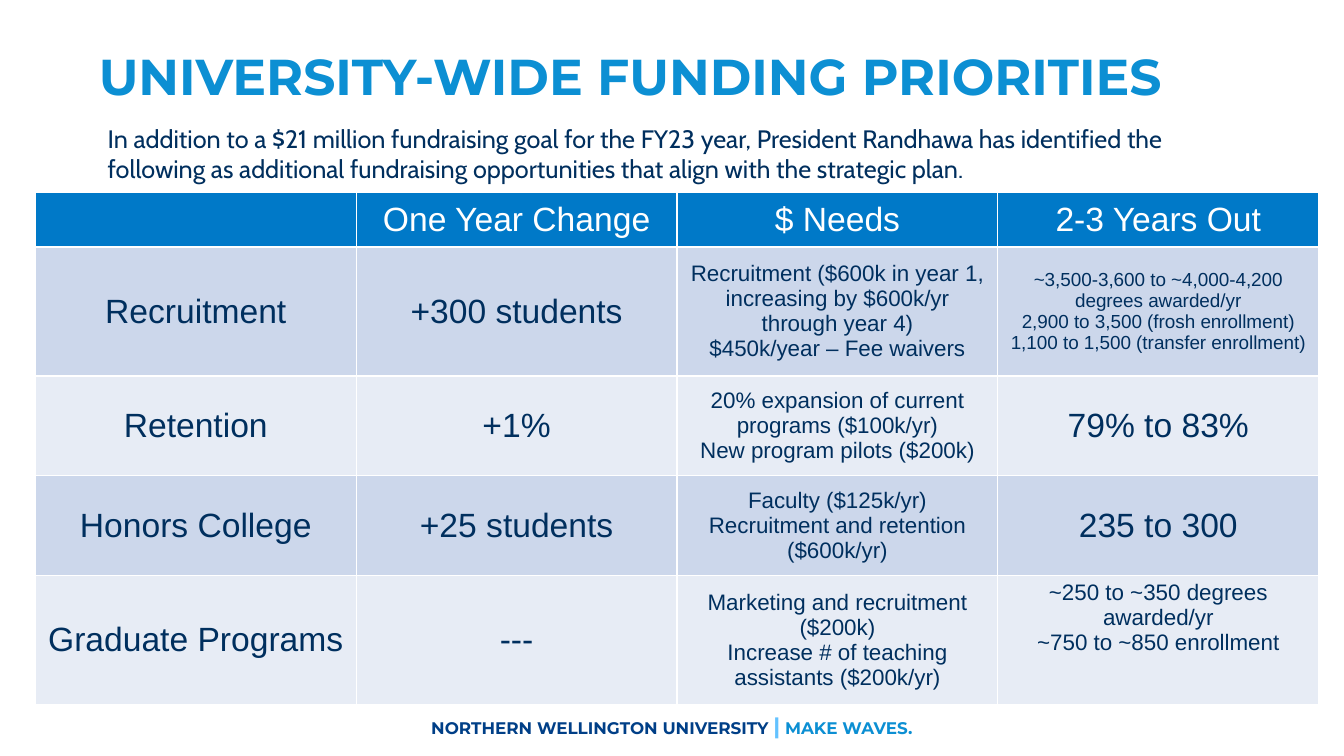
from pptx import Presentation
from pptx.dml.color import RGBColor
from pptx.enum.text import MSO_ANCHOR, MSO_AUTO_SIZE, PP_ALIGN
from pptx.util import Inches, Pt

LEFT, CENTER = PP_ALIGN.LEFT, PP_ALIGN.CENTER
TOP, MIDDLE = MSO_ANCHOR.TOP, MSO_ANCHOR.MIDDLE
NO_AUTOFIT = MSO_AUTO_SIZE.NONE

WHITE = RGBColor(0xFF, 0xFF, 0xFF)
NAVY = RGBColor(0x00, 0x2F, 0x5E)
ROYAL = RGBColor(0x00, 0x3F, 0x87)
BRIGHT = RGBColor(0x0C, 0x8F, 0xD3)
SKY = RGBColor(0x63, 0xC2, 0xFF)
HEADER_BLUE = RGBColor(0x00, 0x79, 0xC8)
BANDS = RGBColor(0xCC, 0xD7, 0xEB), RGBColor(0xE7, 0xEC, 0xF5)

GRID_COLUMNS, GRID_ROWS = 80, 45
LARGE, MEDIUM, SMALL = 24, 16, 13.5

HEADINGS = ["", "One Year Change", "$ Needs", "2-3 Years Out"]
PRIORITIES = [
    ("Recruitment", "+300 students",
     "Recruitment ($600k in year 1, increasing by $600k/yr through year 4)\n"
     "$450k/year – Fee waivers",
     "~3,500-3,600 to ~4,000-4,200 degrees awarded/yr\n"
     "2,900 to 3,500 (frosh enrollment)\n"
     "1,100 to 1,500 (transfer enrollment)", SMALL, MIDDLE),
    ("Retention", "+1%",
     "20% expansion of current programs ($100k/yr)\nNew program pilots ($200k)",
     "79% to 83%", LARGE, MIDDLE),
    ("Honors College", "+25 students",
     "Faculty ($125k/yr)\nRecruitment and retention ($600k/yr)",
     "235 to 300", LARGE, MIDDLE),
    ("Graduate Programs", "---",
     "Marketing and recruitment ($200k)\n"
     "Increase # of teaching assistants ($200k/yr)",
     "~250 to ~350 degrees awarded/yr\n~750 to ~850 enrollment", MEDIUM, TOP),
]


class FundingSlide:
    display_font, body_font, table_font = "Montserrat", "Cabin", "Arial"

    def __init__(self, presentation):
        self.column = presentation.slide_width / GRID_COLUMNS
        self.row = presentation.slide_height / GRID_ROWS
        self.slide = presentation.slides.add_slide(presentation.slide_layouts[5])

    def across(self, columns):
        return round(columns * self.column)

    def down(self, rows):
        return round(rows * self.row)

    def area(self, left, top, width, height):
        return self.across(left), self.down(top), self.across(width), self.down(height)

    def style(self, paragraph, font, size, color, bold=False, align=LEFT):
        paragraph.alignment = align
        paragraph.font.name = font
        paragraph.font.size = Pt(size)
        paragraph.font.color.rgb = color
        paragraph.font.bold = bold

    def title(self, text, *area):
        heading = self.slide.shapes.title
        heading.left, heading.top, heading.width, heading.height = self.area(*area)
        frame = heading.text_frame
        frame.text = text
        frame.auto_size = NO_AUTOFIT
        frame.vertical_anchor = MIDDLE
        frame.paragraphs[0].line_spacing = 0.9
        self.style(frame.paragraphs[0], self.display_font, 36, BRIGHT, bold=True)

    def text_frame(self, *area):
        frame = self.slide.shapes.add_textbox(*self.area(*area)).text_frame
        frame.word_wrap = True
        return frame

    def intro(self, text, *area):
        frame = self.text_frame(*area)
        frame.text = text
        self.style(frame.paragraphs[0], self.body_font, 18, NAVY)

    def footer(self, parts, *area):
        frame = self.text_frame(*area)
        frame.vertical_anchor = MIDDLE
        line = frame.paragraphs[0]
        self.style(line, self.display_font, 12, ROYAL, bold=True, align=CENTER)
        for text, size, color in parts:
            run = line.add_run()
            run.text = text
            run.font.size = Pt(size)
            run.font.color.rgb = color

    def cell(self, cell, text, size, color, fill, anchor=MIDDLE):
        cell.fill.solid()
        cell.fill.fore_color.rgb = fill
        cell.vertical_anchor = anchor
        cell.text = text
        for paragraph in cell.text_frame.paragraphs:
            self.style(paragraph, self.table_font, size, color, align=CENTER)

    def table(self, left, top, column_width, row_heights):
        area = self.area(left, top, column_width * len(HEADINGS), sum(row_heights))
        table = self.slide.shapes.add_table(len(row_heights), len(HEADINGS), *area).table
        for column in table.columns:
            column.width = self.across(column_width)
        for row, height in zip(table.rows, row_heights):
            row.height = self.down(height)
        for c, heading in enumerate(HEADINGS):
            self.cell(table.cell(0, c), heading, LARGE, WHITE, HEADER_BLUE)
        for r, (*texts, outlook_size, outlook_anchor) in enumerate(PRIORITIES, 1):
            sizes = LARGE, LARGE, MEDIUM, outlook_size
            anchors = MIDDLE, MIDDLE, MIDDLE, outlook_anchor
            for c, (text, size, anchor) in enumerate(zip(texts, sizes, anchors)):
                self.cell(table.cell(r, c), text, size, NAVY, BANDS[(r - 1) % 2], anchor)


def main():
    presentation = Presentation()
    presentation.slide_width, presentation.slide_height = Inches(13.33), Inches(7.5)
    page = FundingSlide(presentation)
    page.title("UNIVERSITY-WIDE FUNDING PRIORITIES", 5.28, 0.36, 69, 8.7)
    page.footer([("NORTHERN WELLINGTON UNIVERSITY ", 12, ROYAL), ("|", 16, SKY),
                 (" ", 12, ROYAL), ("MAKE WAVES.", 12, BRIGHT)], 0, 42, 80, 2.4)
    page.intro("In addition to a $21 million fundraising goal for the FY23 year, "
               "President Randhawa has identified the following as additional "
               "fundraising opportunities that align with the strategic plan.",
               5.82, 7.02, 68.1, 4.2)
    page.table(2.1, 11.46, 19.1, [3.24, 7.68, 5.94, 5.94, 7.68])
    presentation.save("out.pptx")


if __name__ == "__main__":
    main()
